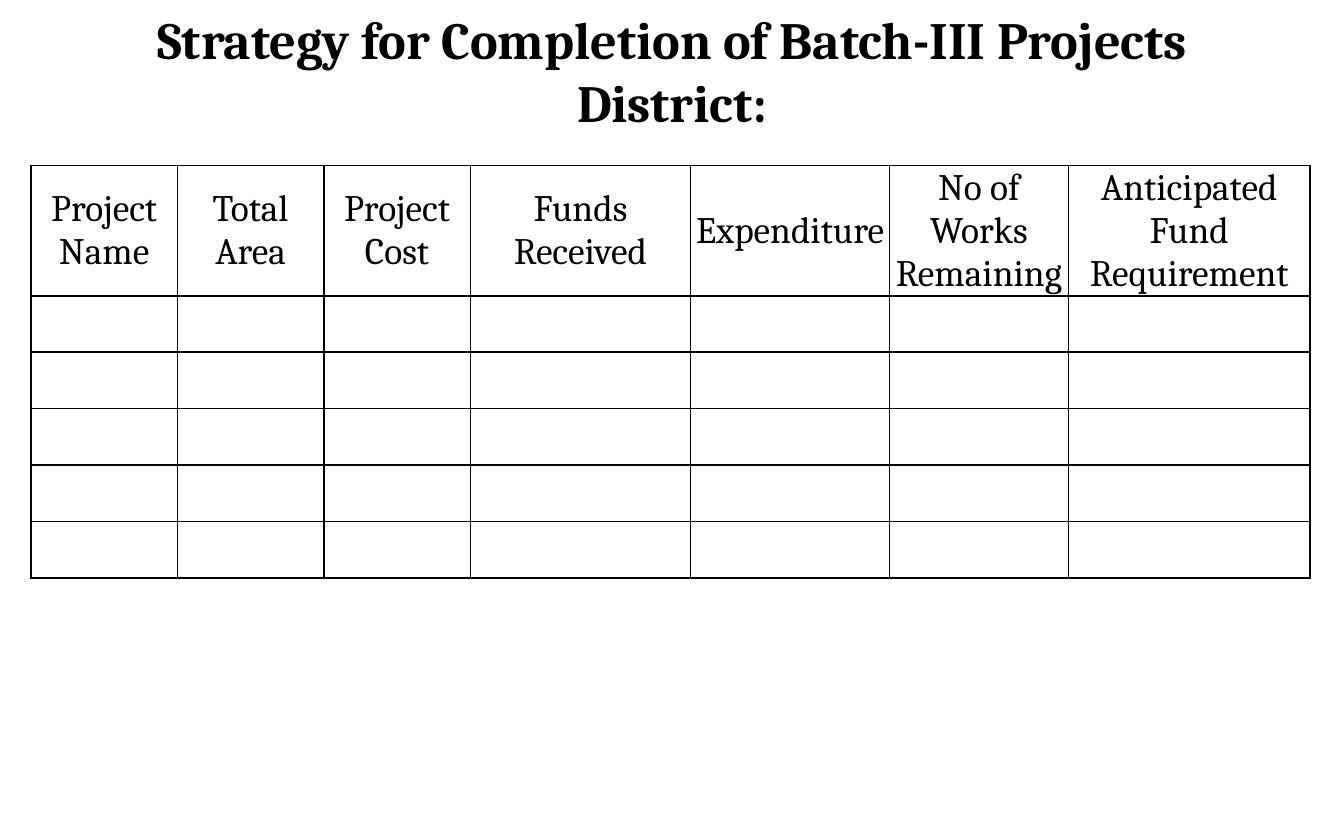
import pptx
import pptx.util
import pptx.dml.color
import pptx.enum.text
import pptx.oxml
import pptx.oxml.ns

Inches = pptx.util.Inches
Pt = pptx.util.Pt

TITLE = "Strategy for Completion of Batch-III Projects\vDistrict:"
COLUMNS = [
    ("Project Name", 1.09),
    ("Total Area", 1.09),
    ("Project Cost", 1.09),
    ("Funds Received", 1.64),
    ("Expenditure ", 1.48),
    ("No of Works Remaining", 1.33),
    ("Anticipated Fund Requirement", 1.8),
]
EMPTY_ROWS = 5
HEADER_HEIGHT, ROW_HEIGHT = 0.97, 0.42
TABLE_LEFT, TABLE_TOP = 0.23, 1.23

COLORS = {"ink": "000000", "paper": "FFFFFF"}
TITLE_FONT = {"name": "Cambria", "size": Pt(28), "bold": True}
HEADER_FONT = {"name": "Cambria", "size": Pt(20), "bold": False}
HEADER_CELL = {
    "vertical_anchor": pptx.enum.text.MSO_ANCHOR.MIDDLE,
    "margin_left": Inches(0.01),
    "margin_top": Inches(0.01),
    "margin_right": Inches(0.01),
    "margin_bottom": 0,
}


def set_attributes(target, values):
    for name, value in values.items():
        setattr(target, name, value)


def style_text(frame, font):
    for paragraph in frame.paragraphs:
        paragraph.alignment = pptx.enum.text.PP_ALIGN.CENTER
        for run in paragraph.runs:
            set_attributes(run.font, font)
            run.font.color.rgb = pptx.dml.color.RGBColor.from_string(COLORS["ink"])


def add_borders(cell):
    """Draw all four sides; lines must precede the fill in tcPr."""
    properties = cell._tc.get_or_add_tcPr()
    for position, side in enumerate(("lnL", "lnR", "lnT", "lnB")):
        border = pptx.oxml.parse_xml(
            f'<a:{side} {pptx.oxml.ns.nsdecls("a")} w="{Pt(1)}"><a:solidFill>'
            f'<a:srgbClr val="{COLORS["ink"]}"/></a:solidFill></a:{side}>'
        )
        properties.insert(position, border)


def add_title(slide):
    title = slide.shapes.add_textbox(0, 0, Inches(10), Inches(1.04))
    frame = title.text_frame
    frame.word_wrap = True
    frame.vertical_anchor = pptx.enum.text.MSO_ANCHOR.MIDDLE
    frame.text = TITLE
    style_text(frame, TITLE_FONT)


def add_project_table(slide):
    heights = [HEADER_HEIGHT] + [ROW_HEIGHT] * EMPTY_ROWS
    width = sum(column_width for _, column_width in COLUMNS)
    table = slide.shapes.add_table(
        len(heights), len(COLUMNS), Inches(TABLE_LEFT), Inches(TABLE_TOP),
        Inches(width), Inches(sum(heights)),
    ).table
    for row, height in zip(table.rows, heights):
        row.height = Inches(height)
    for index, (heading, column_width) in enumerate(COLUMNS):
        table.columns[index].width = Inches(column_width)
        header = table.cell(0, index)
        header.text = heading
        set_attributes(header, HEADER_CELL)
        style_text(header.text_frame, HEADER_FONT)
    for cell in table.iter_cells():
        cell.fill.solid()
        cell.fill.fore_color.rgb = pptx.dml.color.RGBColor.from_string(COLORS["paper"])
        add_borders(cell)


def main():
    presentation = pptx.Presentation()
    presentation.slide_width = Inches(10)
    presentation.slide_height = Inches(6.25)
    slide = presentation.slides.add_slide(presentation.slide_layouts[6])
    add_project_table(slide)
    add_title(slide)
    presentation.save("out.pptx")


if __name__ == "__main__":
    main()
